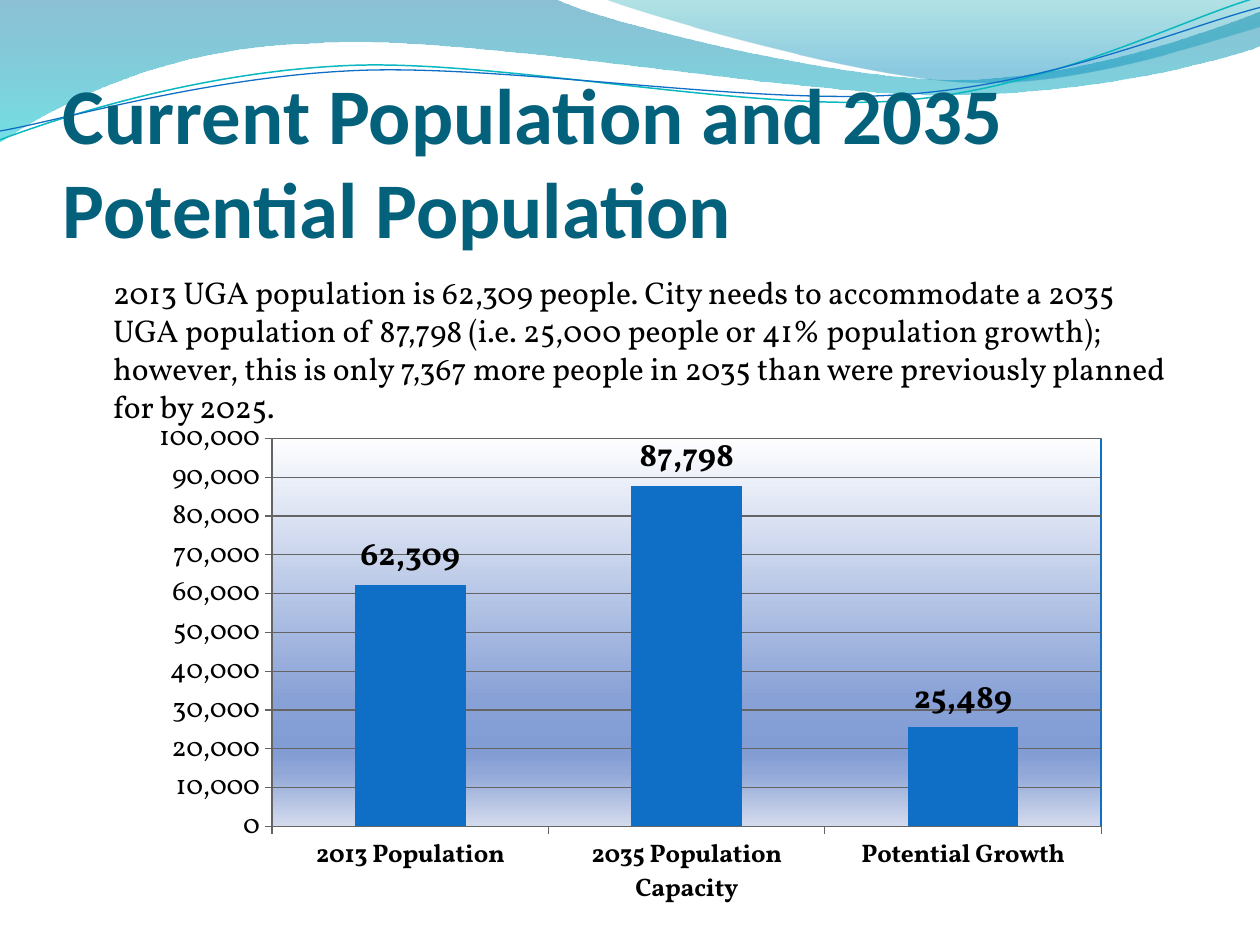
from dataclasses import dataclass
from math import cos, radians, sin

from lxml import etree
from pptx import Presentation
from pptx.chart.data import CategoryChartData
from pptx.dml.color import RGBColor
from pptx.enum.chart import XL_CHART_TYPE, XL_LABEL_POSITION, XL_TICK_MARK
from pptx.enum.text import MSO_ANCHOR
from pptx.oxml import parse_xml
from pptx.oxml.ns import nsdecls, qn
from pptx.util import Inches, Pt

COLUMN = XL_CHART_TYPE.COLUMN_CLUSTERED
OUTSIDE = XL_LABEL_POSITION.OUTSIDE_END
CROSS = XL_TICK_MARK.CROSS
TOP, BOTTOM = MSO_ANCHOR.TOP, MSO_ANCHOR.BOTTOM


@dataclass(frozen=True)
class Theme:
    head: str = "Calibri"
    body: str = "Vollkorn"
    title: str = "04617B"
    ink: str = "000000"
    blue: str = "0F6FC6"
    teal: str = "0AB8BF"
    grid: str = "646464"
    title_size: float = 45
    text_size: float = 18
    label_size: float = 18.8
    value_size: float = 16
    name_size: float = 14.5
    # Gradient stops: position, colour, opacity in percent
    wave: tuple = ((0, "0074A1", 45), (100, "00C6CF", 55))
    crest: tuple = ((0, "00A1A9", 30), (80, "008BBF", 45))
    plot: tuple = ((0, "FEFEFF", 100), (68, "87A0D5", 100), (81, "829DD4", 100),
                   (86, "91A7D7", 100), (100, "D4DBED", 100))


def style(font, size, color, face, bold=False):
    font.size, font.name, font.bold = Pt(size), face, bold
    font.color.rgb = RGBColor.from_string(color)


def stroke(line, color, width=0.75):
    line.color.rgb = RGBColor.from_string(color)
    line.width = Pt(width)


def blend(stops):
    """Return a top-to-bottom gradient fill element."""
    marks = "".join(
        f'<a:gs pos="{pos * 1000}"><a:srgbClr val="{color}">'
        f'<a:alpha val="{alpha * 1000}"/></a:srgbClr></a:gs>'
        for pos, color, alpha in stops)
    return parse_xml(f'<a:gradFill {nsdecls("a")} rotWithShape="1"><a:gsLst>{marks}'
                     '</a:gsLst><a:lin ang="5400000" scaled="0"/></a:gradFill>')


def turn(point, angle):
    x, y = point
    c, s = cos(radians(angle)), sin(radians(angle))
    return x * c - y * s, x * s + y * c


def bend(shape, parts):
    """Join each three line segments of a six-number part into one cubic curve."""
    lines = shape.element.findall(".//" + qn("a:lnTo"))
    for part in parts:
        trio, lines = lines[:len(part) // 2], lines[len(part) // 2:]
        if len(trio) == 3:
            curve = etree.Element(qn("a:cubicBezTo"))
            trio[0].addprevious(curve)
            for line in trio:
                curve.append(line[0])
                line.getparent().remove(line)


class Deck:
    def __init__(self, theme):
        self.theme = theme
        self.file = Presentation()
        self.file.slide_width, self.file.slide_height = Inches(10), Inches(7.5)
        self.slide = self.file.slides.add_slide(self.file.slide_layouts[6])

    def curve(self, home, *parts, angle=0):
        """Draw points and cubic curves, stored level and turned by the angle."""
        pairs = [(p[i], p[i + 1]) for p in parts for i in range(0, len(p), 2)]
        points = [tuple(map(Inches, turn(pair, -angle))) for pair in pairs]
        maker = home.build_freeform(*points[0])
        maker.add_line_segments(points[1:], close=not angle)
        shape = maker.convert_to_shape()
        bend(shape, parts[1:])
        shape.shadow.inherit = False
        shape.fill.background()
        half = shape.width / 2, shape.height / 2
        mid = turn((shape.left + half[0], shape.top + half[1]), angle)
        shape.left, shape.top = int(mid[0] - half[0]), int(mid[1] - half[1])
        shape.rotation = angle % 360
        return shape

    def band(self, stops, *parts):
        shape = self.curve(self.slide.shapes, *parts)
        props = shape.element.spPr
        props.replace(props.find(qn("a:noFill")), blend(stops))
        shape.line.fill.background()

    def wires(self, *wires):
        group = self.slide.shapes.add_group_shape()
        for color, width, parts in wires:
            stroke(self.curve(group.shapes, *parts, angle=-2.7).line, color, width)

    def text(self, words, box, anchor=TOP, inset=0.1, indent=0, **look):
        frame = self.slide.shapes.add_textbox(*map(Inches, box)).text_frame
        frame.word_wrap = True
        frame.vertical_anchor = anchor
        frame.margin_left = frame.margin_right = Inches(inset)
        frame.margin_bottom = Inches(0.05 if anchor == TOP else 0)
        para = frame.paragraphs[0]
        run = para.add_run()
        run.text = words
        style(run.font, **look)
        if indent:
            para._p.get_or_add_pPr().set("marL", str(Inches(indent)))

    def chart(self, names, values, box, area):
        look = self.theme
        data = CategoryChartData(number_format="#,##0")
        data.categories = names
        data.add_series("Series 1", values)
        chart = self.slide.shapes.add_chart(COLUMN, *map(Inches, box), data).chart
        chart.has_legend = chart.has_title = False
        style(chart.font, look.text_size, look.ink, look.body)

        axes = ((chart.category_axis, look.name_size, True),
                (chart.value_axis, look.value_size, False))
        for axis, size, bold in axes:
            axis.major_tick_mark = CROSS
            stroke(axis.format.line, look.grid)
            style(axis.tick_labels.font, size, look.ink, look.body, bold)
            axis.major_tick_mark = XL_TICK_MARK.OUTSIDE
        scale = chart.value_axis
        scale.minimum_scale, scale.maximum_scale, scale.major_unit = 0, 100000, 10000
        scale.has_major_gridlines = True
        stroke(scale.major_gridlines.format.line, look.grid)

        plot = chart.plots[0]
        plot.vary_by_categories = False
        plot.gap_width = 150
        fill = plot.series[0].format.fill
        fill.solid()
        fill.fore_color.rgb = RGBColor.from_string(look.blue)
        plot.has_data_labels = True
        labels = plot.data_labels
        labels.show_value = True
        labels.position = OUTSIDE
        for part in (labels, scale.tick_labels):
            part.number_format = "#,##0"
            part.number_format_is_linked = False
        style(labels.font, look.label_size, look.ink, look.body, True)
        shares = [size / box[2 + i % 2] for i, size in enumerate(area)]
        self.frame(chart.element.find(".//" + qn("c:plotArea")), shares)

    def frame(self, plot, shares):
        """Place the inner plot area and give it a gradient and a border."""
        old = plot.find(qn("c:layout"))
        if old is not None:
            plot.remove(old)
        spots = "".join(f'<c:{tag} val="{num}"/>' for tag, num in zip("xywh", shares))
        plot.insert(0, parse_xml(
            f'<c:layout {nsdecls("c")}><c:manualLayout><c:layoutTarget val="inner"/>'
            f'<c:xMode val="edge"/><c:yMode val="edge"/>{spots}'
            '</c:manualLayout></c:layout>'))
        props = etree.SubElement(plot, qn("c:spPr"))
        props.append(blend(self.theme.plot))
        props.append(parse_xml(
            f'<a:ln {nsdecls("a")} w="{Pt(1)}"><a:solidFill>'
            f'<a:srgbClr val="{self.theme.blue}"/></a:solidFill></a:ln>'))


def main():
    theme = Theme()
    deck = Deck(theme)
    deck.band(theme.wave, (0, 0), (4.4, -0.01), (4.76, 0.17, 6.64, 0.63, 7.58, 0.63),
              (8.53, 0.63, 9.58, 0.26, 10, 0.09), (10.01, 0.36),
              (9.83, 0.44, 8.7, 0.76, 7.46, 0.75),
              (6.22, 0.75, 3.82, 0.28, 2.57, 0.34),
              (1.29, 0.36, 0.46, 0.83, -0.01, 1.13))
    deck.band(theme.crest, (4.79, -0.01), (5.09, 0.11, 6.82, 0.62, 7.69, 0.65),
              (8.56, 0.69, 9.61, 0.32, 10, 0.21), (10, 0))
    deck.wires(
        (theme.teal, 0.85, ((0, 1.11), (0.48, 0.93, 1.58, 0.57, 2.77, 0.52),
                            (3.95, 0.47, 5.93, 0.89, 7.13, 0.8),
                            (8.33, 0.71, 9.38, 0.15, 9.98, -0.02))),
        (theme.blue, 0.75, ((0, 1.04), (0.47, 0.96, 1.64, 0.61, 2.83, 0.56),
                            (4.03, 0.51, 5.97, 0.84, 7.17, 0.75),
                            (8.36, 0.67, 9.41, 0.21, 10, 0.06))))
    deck.text("Current Population and 2035 Potential Population", (0.5, 0.77, 9, 1.25),
              anchor=BOTTOM, inset=0, size=theme.title_size, color=theme.title,
              face=theme.head, bold=True)
    deck.text("2013 UGA population is 62,309 people. City needs to accommodate a 2035 "
              "UGA population of 87,798 (i.e. 25,000 people or 41% population growth); "
              "however, this is only 7,367 more people in 2035 than were previously "
              "planned for by 2025.", (0.5, 2.12, 9, 4.8), indent=0.3,
              size=theme.text_size, color=theme.ink, face=theme.body)
    deck.chart(("2013 Population", "2035 Population Capacity", "Potential Growth"),
               (62309, 87798, 25489), (0.92, 3, 7.92, 4.25), (1.24, 0.48, 6.58, 3.08))
    deck.file.save("out.pptx")


if __name__ == "__main__":
    main()
